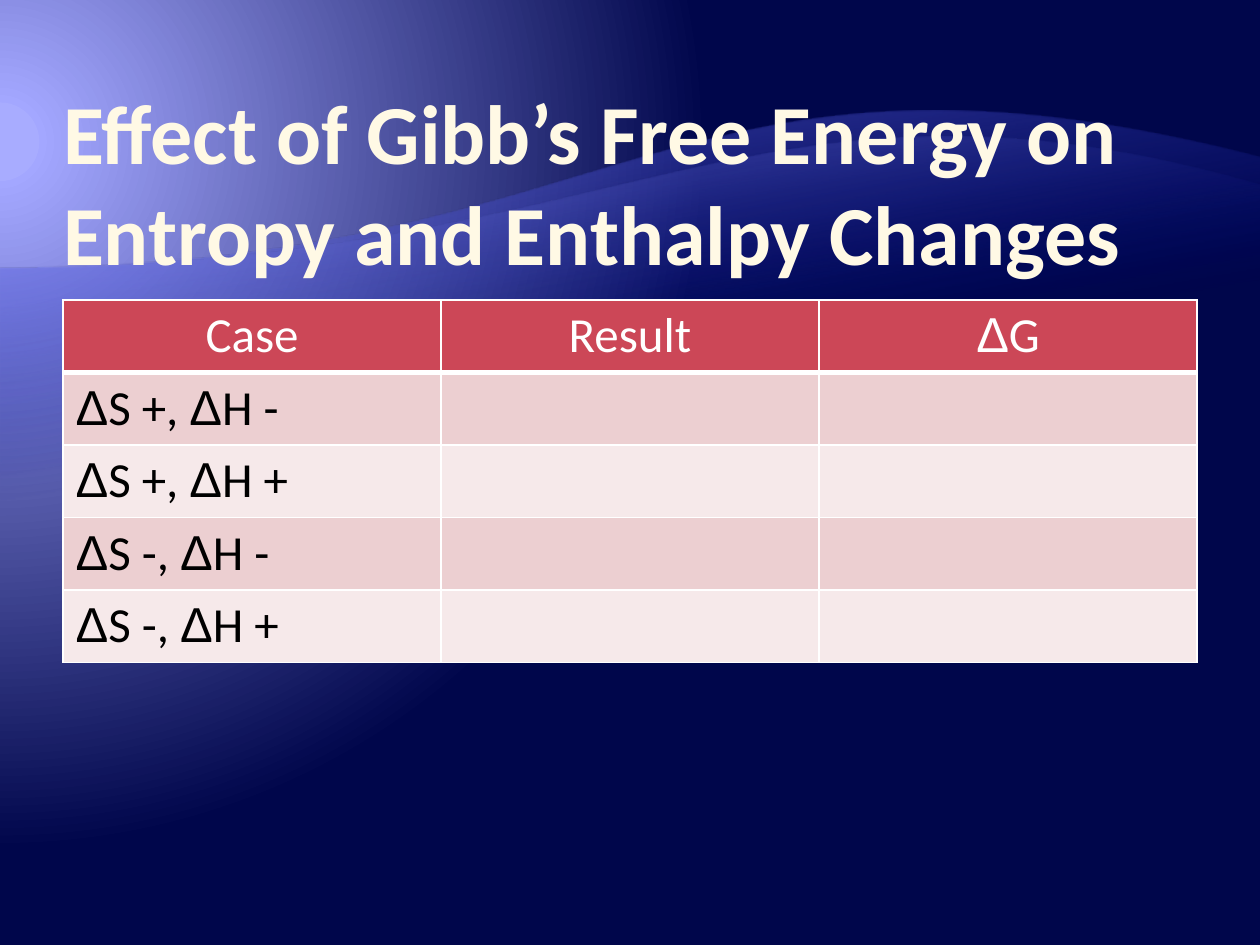
import itertools

import pptx
import pptx.dml.color
import pptx.enum.text
import pptx.oxml
import pptx.oxml.ns
import pptx.util

Pt = pptx.util.Pt
RGBColor = pptx.dml.color.RGBColor
qn = pptx.oxml.ns.qn

NAVY = RGBColor(0x00, 0x06, 0x4B)
BLUE = RGBColor(0x00, 0x0D, 0x9E)
VIOLET = RGBColor(0x79, 0x7F, 0xFF)
LAVENDER = RGBColor(0xA3, 0xA7, 0xFF)
PALE_LAVENDER = RGBColor(0xA8, 0xAC, 0xFF)
CREAM = RGBColor(0xFF, 0xF9, 0xE5)
OLIVE = RGBColor(0x8F, 0x84, 0x62)
WHITE = RGBColor(0xFF, 0xFF, 0xFF)
BLACK = RGBColor(0x00, 0x00, 0x00)
RED = RGBColor(0xCC, 0x47, 0x57)
PINK = RGBColor(0xEC, 0xCF, 0xD1)
PALE_PINK = RGBColor(0xF6, 0xE9, 0xEA)

SLIDE_WIDTH, SLIDE_HEIGHT = 720, 540
WAVE_START = 153.36
COLUMN_WIDTH, ROW_HEIGHT = 216, 40.8
HEADINGS = ["Case", "Result", "ΔG"]
CASES = ["ΔS +, ΔH -", "ΔS +, ΔH +", "ΔS -, ΔH -", "ΔS -, ΔH +"]


def make_element(tag, content, attributes=""):
    namespace = pptx.oxml.ns.nsdecls("a")
    return pptx.oxml.parse_xml(f"<a:{tag} {namespace} {attributes}>{content}</a:{tag}>")


def set_gradient(properties, stops, direction):
    """Swap a solid fill for a gradient; stops are (position, colour, opacity) in percent."""
    stop_list = "".join(
        f'<a:gs pos="{position * 1000}"><a:srgbClr val="{color}">'
        f'<a:alpha val="{opacity * 1000}"/></a:srgbClr></a:gs>'
        for position, color, opacity in stops
    )
    gradient = make_element(
        "gradFill", f"<a:gsLst>{stop_list}</a:gsLst>{direction}", 'rotWithShape="1"'
    )
    properties.replace(properties.find(qn("a:solidFill")), gradient)


def paint_background(slide):
    slide.background.fill.solid()
    set_gradient(
        slide.element.find(f".//{qn('p:bgPr')}"),
        [(5, PALE_LAVENDER, 100), (5, LAVENDER, 100), (90, NAVY, 100)],
        '<a:path path="circle">'
        '<a:fillToRect l="20000" t="30000" r="135000" b="100000"/></a:path>',
    )


def add_wave(slide, controls, end, bottom, color, opacity):
    """Add a band behind the title whose top edge is a Bezier curve."""
    builder = slide.shapes.build_freeform(Pt(0), Pt(WAVE_START))
    corners = [(SLIDE_WIDTH, end), (SLIDE_WIDTH, bottom), (0, bottom)]
    builder.add_line_segments([(Pt(x), Pt(y)) for x, y in corners])
    wave = builder.convert_to_shape()
    points = "".join(
        f'<a:pt x="{Pt(x)}" y="{Pt(y) - wave.top}"/>'
        for x, y in [*controls, (SLIDE_WIDTH, end)]
    )
    top_edge = wave.element.find(f".//{qn('a:lnTo')}")
    top_edge.getparent().replace(top_edge, make_element("cubicBezTo", points))
    wave.shadow.inherit = False
    wave.line.fill.background()
    wave.fill.solid()
    set_gradient(
        wave.element.spPr,
        [(65, BLUE, 0), (100, color, opacity)],
        f'<a:lin ang="{260 * 60000}" scaled="0"/>',
    )
    slide.shapes.title.element.addprevious(wave.element)


def format_title(title, text):
    title.left, title.top = Pt(36), Pt(41.76)
    title.width, title.height = Pt(648), Pt(120.24)
    frame = title.text_frame
    frame.text = text
    frame.word_wrap = True
    frame.auto_size = pptx.enum.text.MSO_AUTO_SIZE.NONE
    frame.vertical_anchor = pptx.enum.text.MSO_ANCHOR.BOTTOM
    frame.margin_left = frame.margin_right = 0
    frame.margin_top = frame.margin_bottom = Pt(0.72)
    paragraph = frame.paragraphs[0]
    paragraph.alignment = pptx.enum.text.PP_ALIGN.LEFT
    font = paragraph.font
    font.name, font.size, font.bold = "Calibri", Pt(48), True
    font.color.rgb = CREAM
    outline = f'<a:solidFill><a:srgbClr val="{OLIVE}"/></a:solidFill>'
    run_properties = paragraph.runs[0]._r.get_or_add_rPr()
    run_properties.insert(0, make_element("ln", outline, f'w="{Pt(0.04)}"'))


def set_borders(cell, bottom_width):
    properties = cell._tc.get_or_add_tcPr()
    line_fill = f'<a:solidFill><a:srgbClr val="{WHITE}"/></a:solidFill>'
    for tag, width in [("lnL", 1), ("lnR", 1), ("lnT", 1), ("lnB", bottom_width)]:
        properties.append(make_element(tag, line_fill, f'w="{Pt(width)}"'))


def write_cell(cell, text, color):
    """Write text with its delta signs in Arial and the rest in Calibri."""
    paragraph = cell.text_frame.paragraphs[0]
    for is_delta, letters in itertools.groupby(text, lambda letter: letter == "Δ"):
        run = paragraph.add_run()
        run.text = "".join(letters)
        run.font.name = "Arial" if is_delta else "Calibri"
        run.font.size, run.font.bold = Pt(28), False
        run.font.color.rgb = color


def add_case_table(slide):
    rows = [HEADINGS] + [[case, "", ""] for case in CASES]
    table = slide.shapes.add_table(
        len(rows), len(HEADINGS), Pt(36), Pt(171.36),
        Pt(COLUMN_WIDTH * len(HEADINGS)), Pt(ROW_HEIGHT * len(rows)),
    ).table
    for row_index, row in enumerate(rows):
        is_header = row_index == 0
        fill = RED if is_header else (PALE_PINK, PINK)[row_index % 2]
        for column_index, text in enumerate(row):
            cell = table.cell(row_index, column_index)
            set_borders(cell, 3 if is_header else 1)
            cell.fill.solid()
            cell.fill.fore_color.rgb = fill
            write_cell(cell, text, WHITE if is_header else BLACK)
            if is_header:
                cell.text_frame.paragraphs[0].alignment = pptx.enum.text.PP_ALIGN.CENTER


def main():
    presentation = pptx.Presentation()
    presentation.slide_width, presentation.slide_height = Pt(SLIDE_WIDTH), Pt(SLIDE_HEIGHT)
    slide = presentation.slides.add_slide(presentation.slide_layouts[5])
    paint_background(slide)
    add_wave(slide, [(360, WAVE_START), (384.48, 3.6)], 90, 527.76, VIOLET, 55)
    add_wave(slide, [(360, WAVE_START), (430.56, 22.32)], 105.84, 458.64, LAVENDER, 30)
    format_title(
        slide.shapes.title, "Effect of Gibb’s Free Energy on Entropy and Enthalpy Changes"
    )
    add_case_table(slide)
    presentation.save("out.pptx")


if __name__ == "__main__":
    main()
